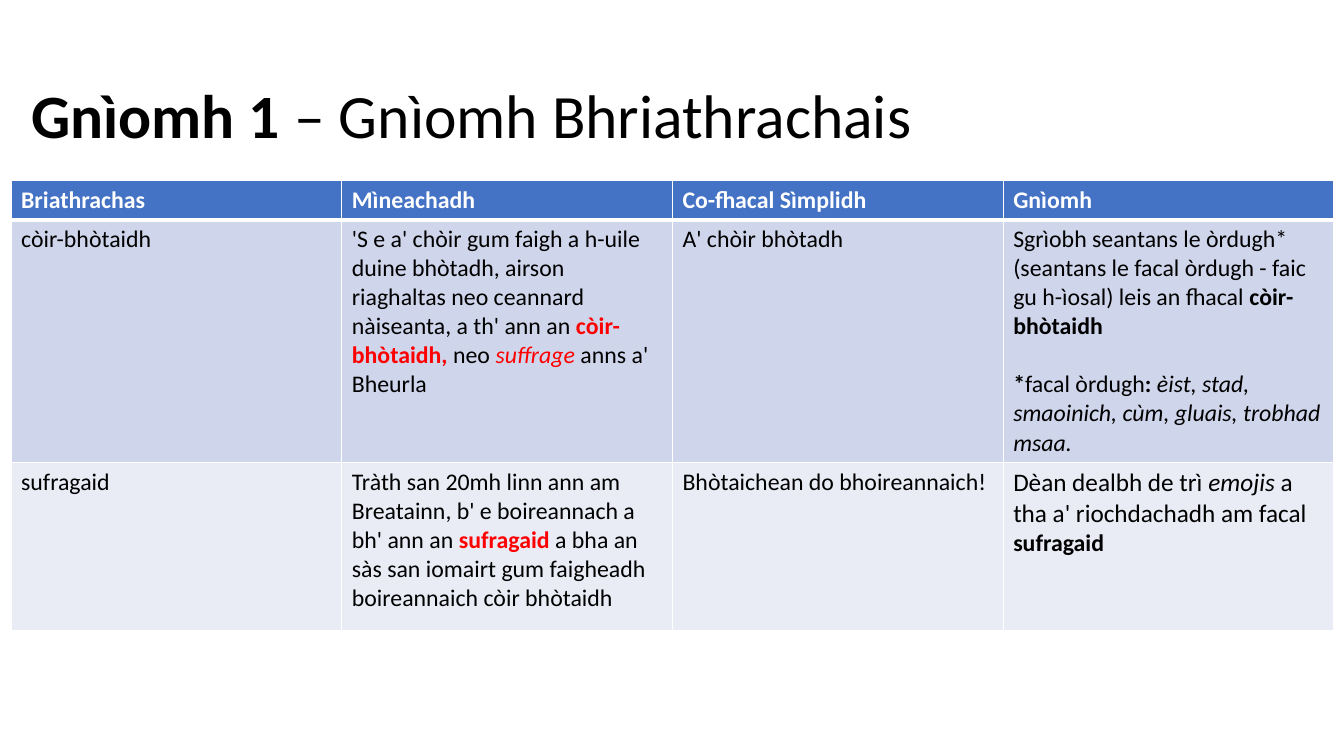
from lxml.etree import SubElement
from pptx import Presentation
from pptx.dml.color import RGBColor
from pptx.enum.text import MSO_ANCHOR, MSO_AUTO_SIZE, PP_ALIGN
from pptx.oxml.ns import qn
from pptx.util import Inches, Pt

FONT = "Calibri"
BLACK, WHITE, RED = "000000", "FFFFFF", "FF0000"
ROW_FILLS = ["4472C4", "CFD5EA", "E9EBF5"]
ROW_HEIGHTS = [0.39, 2.41, 1.67]
BODY_SIZE = 17
LINE_GAP = 20.75

# A cell is a list of paragraphs; a paragraph is a list of (text, style, size).
# Style letters: b bold, i italic, r red.
HEADERS = ["Briathrachas", "Mìneachadh", "Co-fhacal Sìmplidh", "Gnìomh"]
VOCABULARY = [
    [
        [[("còir-bhòtaidh", "", 17)]],
        [[("'S e a' chòir gum faigh a h-uile duine bhòtadh, airson riaghaltas neo "
           "ceannard nàiseanta, a th' ann an", "", 17),
          (" còir-bhòtaidh, ", "br", 17), ("neo ", "", 17),
          ("suffrage", "ir", 17), (" anns a' Bheurla", "", 17)]],
        [[("A' chòir bhòtadh", "", 17)]],
        [[("Sgrìobh seantans le òrdugh* (seantans le facal òrdugh - faic gu h-ìosal) "
           "leis an fhacal ", "", 17), ("còir-bhòtaidh", "b", 17)],
         [("*", "b", 17), ("facal òrdugh", "", 17), (": ", "b", 17),
          ("èist, stad, smaoinich, cùm, gluais, trobhad msaa.", "i", 17)]],
    ],
    [
        [[("sufragaid", "", 17)]],
        [[("Tràth san 20mh linn ann am Breatainn, b' e boireannach a bh' ann an ", "", 17),
          ("sufragaid", "br", 17),
          (" a bha an sàs san iomairt gum faigheadh boireannaich còir bhòtaidh", "", 17)]],
        [[("Bhòtaichean do bhoireannaich!", "", 17)]],
        [[("Dèan dealbh de trì ", "", 18), ("emojis", "i", 18), (" a", "", 18)],
         [("tha a' riochdachadh am facal", "", 18)],
         [("sufragaid", "b", 17)]],
    ],
]


def color(hex_value):
    return RGBColor.from_string(hex_value)


def add_runs(paragraph, pieces, base_color=BLACK):
    for text, style, size in pieces:
        run = paragraph.add_run()
        run.text = text
        font = run.font
        font.name, font.size = FONT, Pt(size)
        font.bold, font.italic = "b" in style, "i" in style
        font.color.rgb = color(RED if "r" in style else base_color)


def set_borders(cell, top, bottom):
    """Give the cell white borders: 1 pt at the sides, the given points elsewhere."""
    properties = cell._tc.get_or_add_tcPr()
    widths = {"a:lnL": 1, "a:lnR": 1, "a:lnT": top, "a:lnB": bottom}
    for position, (tag, width) in enumerate(widths.items()):
        line = SubElement(properties, qn(tag), w=str(Pt(width)))
        fill = SubElement(line, qn("a:solidFill"))
        SubElement(fill, qn("a:srgbClr"), val=WHITE)
        properties.insert(position, line)


def fill_cell(cell, paragraphs, fill, text_color):
    cell.fill.solid()
    cell.fill.fore_color.rgb = color(fill)
    text_frame = cell.text_frame
    for index, pieces in enumerate(paragraphs):
        paragraph = text_frame.add_paragraph() if index else text_frame.paragraphs[0]
        add_runs(paragraph, pieces, text_color)
        if pieces[0][0] == "*":
            paragraph.space_before = Pt(LINE_GAP)


def add_title(slide, left, top, width, height):
    title = slide.shapes.title
    title.left, title.top = Inches(left), Inches(top)
    title.width, title.height = Inches(width), Inches(height)
    text_frame = title.text_frame
    text_frame.auto_size = MSO_AUTO_SIZE.NONE
    text_frame.vertical_anchor = MSO_ANCHOR.MIDDLE
    paragraph = text_frame.paragraphs[0]
    paragraph.alignment = PP_ALIGN.LEFT
    paragraph.line_spacing = 0.9
    add_runs(paragraph, [("Gnìomh 1 ", "b", 44), ("– Gnìomh Bhriathrachais", "", 44)])


def add_vocabulary_table(slide, left, top, width):
    header = [[[(name, "b", BODY_SIZE)]] for name in HEADERS]
    rows = [header, *VOCABULARY]
    frame = slide.shapes.add_table(
        len(rows), len(HEADERS), Inches(left), Inches(top),
        Inches(width), Inches(sum(ROW_HEIGHTS)))
    table = frame.table
    table.horz_banding = False
    for row_index, row in enumerate(rows):
        table.rows[row_index].height = Inches(ROW_HEIGHTS[row_index])
        for column_index, paragraphs in enumerate(row):
            cell = table.cell(row_index, column_index)
            fill_cell(cell, paragraphs, ROW_FILLS[row_index],
                      BLACK if row_index else WHITE)
            set_borders(cell, top=3 if row_index == 1 else 1,
                        bottom=3 if row_index == 0 else 1)


def main():
    presentation = Presentation()
    presentation.slide_width = Inches(13.33)
    presentation.slide_height = Inches(7.5)
    slide = presentation.slides.add_slide(presentation.slide_layouts[5])
    add_title(slide, 0.21, 0.45, 11.5, 1.45)
    add_vocabulary_table(slide, 0.11, 1.79, 13.12)
    presentation.save("out.pptx")


if __name__ == "__main__":
    main()
